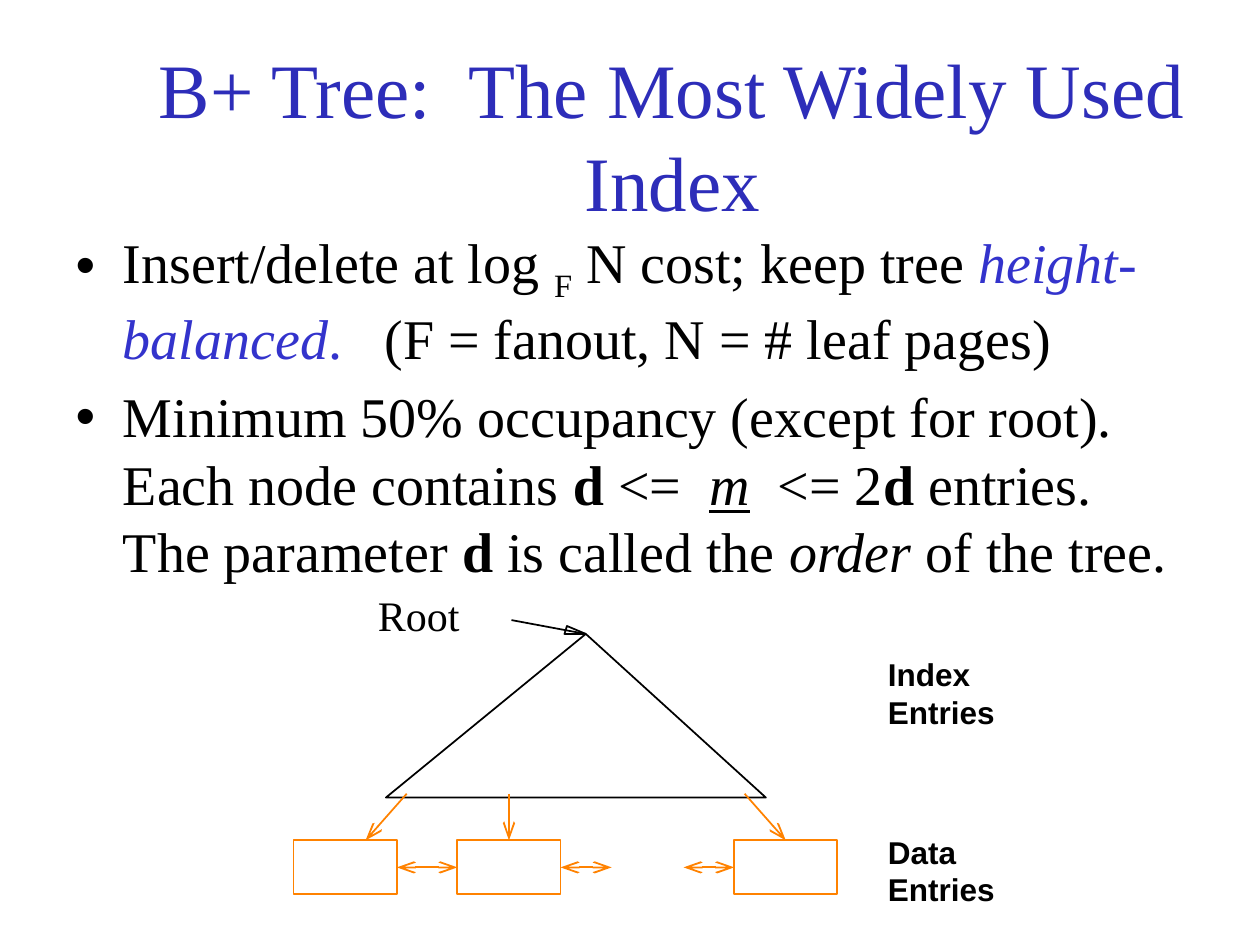
from typing import NamedTuple, Optional

from lxml.etree import SubElement
from pptx import Presentation
from pptx.dml.color import RGBColor
from pptx.enum.shapes import MSO_CONNECTOR as Link, MSO_SHAPE as Kind
from pptx.enum.text import MSO_ANCHOR as Anchor, MSO_AUTO_SIZE as Fit, PP_ALIGN as Align
from pptx.oxml.ns import qn
from pptx.util import Cm, Pt

BLACK = RGBColor(0x00, 0x00, 0x00)
NAVY = RGBColor(0x2D, 0x2D, 0xB9)
BLUE = RGBColor(0x33, 0x33, 0xCC)
ORANGE = RGBColor(0xFF, 0x82, 0x00)
SERIF, SANS = "Times New Roman", "Arial"

TOP, WIDE, HIGH = 16.94, 2.08, 1.09
MID = TOP + HIGH / 2
LEFTS = (5.92, 9.22, 14.8)
APEX = (11.81, 12.78)
BASE = 16.08
TOP_SIDE, LEFT_SIDE, RIGHT_SIDE = 0, 1, 3


class Run(NamedTuple):
    text: str
    style: dict = {}


class Arrow(NamedTuple):
    start: tuple
    end: tuple
    tail: Optional[tuple] = None  # (leaf index, side) joined at the start
    head: Optional[tuple] = None  # (leaf index, side) joined at the end
    both: bool = False


class Label(NamedTuple):
    text: str
    left: float
    top: float
    width: float
    height: float
    size: int
    face: str
    bold: bool
    wrap: bool


BOLD, ITALIC = {"bold": True}, {"italic": True}
BULLETS = (
    (
        Run("Insert/delete at log "),
        Run("F", {"sub": True}),
        Run(" N cost; keep tree "),
        Run("height-balanced", {"italic": True, "color": BLUE}),
        Run(".   ", {"color": BLUE}),
        Run("(F = fanout, N = # leaf pages)"),
    ),
    (
        Run("Minimum 50% occupancy (except for root).  Each node contains "),
        Run("d", BOLD),
        Run(" <=  "),
        Run("m", {"italic": True, "underline": True}),
        Run("  <= 2"),
        Run("d", BOLD),
        Run(" entries.  The parameter "),
        Run("d", BOLD),
        Run(" is called the "),
        Run("order", ITALIC),
        Run(" of the tree."),
    ),
)
ARROWS = (
    Arrow((8.2, 16.0), (7.37, TOP)),
    Arrow((10.26, 16.0), (10.26, TOP), head=(1, TOP_SIDE)),
    Arrow((15.01, 16.0), (15.84, TOP), head=(2, TOP_SIDE)),
    Arrow((8.0, MID), (9.22, MID), (0, RIGHT_SIDE), (1, LEFT_SIDE), True),
    Arrow((11.3, MID), (12.33, MID), tail=(1, RIGHT_SIDE), both=True),
    Arrow((13.78, MID), (14.8, MID), head=(2, LEFT_SIDE), both=True),
)
LABELS = (
    Label("Index Entries", 17.65, 13.08, 4.2, 1.7, 18, SANS, True, True),
    Label("Data Entries", 17.65, 16.66, 3.8, 1.7, 18, SANS, True, True),
    Label("Root", 7.37, 11.76, 2.16, 1.27, 24, SERIF, False, False),
)


def place(shape, *box: float) -> None:
    for name, value in zip(("left", "top", "width", "height"), box):
        setattr(shape, name, Cm(value))


def write(para, run: Run, size: int, face: str, color: RGBColor) -> None:
    part = para.add_run()
    part.text = run.text
    style = {"size": Pt(size), "name": face, **run.style}
    part.font.color.rgb = style.pop("color", color)
    if style.pop("sub", False):
        part.font._element.set("baseline", "-25000")
    for name, value in style.items():
        setattr(part.font, name, value)


def outline(shape, color: RGBColor) -> None:
    shape.shadow.inherit = False
    shape.fill.background()
    shape.line.color.rgb = color
    shape.line.width = Pt(1)


def draw_path(shapes, points: tuple) -> None:
    first, *rest = [(Cm(x), Cm(y)) for x, y in points]
    path = shapes.build_freeform(*first)
    path.add_line_segments(rest, close=True)
    outline(path.convert_to_shape(), BLACK)


def draw_line(shapes, start: tuple, end: tuple, color: RGBColor):
    line = shapes.add_connector(Link.STRAIGHT, *(Cm(v) for v in start + end))
    line.line.color.rgb = color
    line.line.width = Pt(1)
    SubElement(line._element.spPr, qn("a:effectLst"))
    return line


def draw_arrow(shapes, arrow: Arrow, leaves: list) -> None:
    line = draw_line(shapes, arrow.start, arrow.end, ORANGE)
    if arrow.tail:
        line.begin_connect(leaves[arrow.tail[0]], arrow.tail[1])
    if arrow.head:
        line.end_connect(leaves[arrow.head[0]], arrow.head[1])
    for tag in ("a:headEnd", "a:tailEnd") if arrow.both else ("a:tailEnd",):
        SubElement(line.line._get_or_add_ln(), qn(tag), type="arrow", w="med", len="lg")


def draw_leaf(shapes, left: float):
    leaf = shapes.add_shape(Kind.RECTANGLE, *(Cm(v) for v in (left, TOP, WIDE, HIGH)))
    outline(leaf, ORANGE)
    return leaf


def draw_label(shapes, label: Label) -> None:
    box = shapes.add_textbox(*(Cm(v) for v in label[1:5]))
    box.text_frame.word_wrap = label.wrap
    run = Run(label.text, {"bold": label.bold})
    write(box.text_frame.paragraphs[0], run, label.size, label.face, BLACK)


def fill_text(slide) -> None:
    title, body = slide.shapes.title, slide.placeholders[1]
    place(title, 1.9, 1.17, 23.3, 3.07)
    place(body, 1.27, 4.45, 23.06, 8.25)
    for shape in (title, body):
        shape.text_frame.auto_size = Fit.NONE
    title.text_frame.vertical_anchor = Anchor.MIDDLE
    head = title.text_frame.paragraphs[0]
    head.alignment = Align.CENTER
    write(head, Run("B+ Tree:  The Most Widely Used Index"), 44, SERIF, NAVY)
    for i, runs in enumerate(BULLETS):
        frame = body.text_frame
        para = frame.add_paragraph() if i else frame.paragraphs[0]
        para.space_before = Pt(6.4 if i else 0)
        for run in runs:
            write(para, run, 32, SERIF, BLACK)


def main() -> None:
    deck = Presentation()
    deck.slide_width, deck.slide_height = Cm(25.4), Cm(19.05)
    slide = deck.slides.add_slide(deck.slide_layouts[1])
    shapes = slide.shapes
    fill_text(slide)
    draw_path(shapes, ((7.78, BASE), APEX, (15.44, BASE)))
    draw_line(shapes, (10.31, 12.5), APEX, BLACK)
    draw_path(shapes, ((11.43, 12.62), APEX, (11.38, 12.78)))
    leaves = [draw_leaf(shapes, left) for left in LEFTS]
    for arrow in ARROWS:
        draw_arrow(shapes, arrow, leaves)
    for label in LABELS:
        draw_label(shapes, label)
    deck.save("out.pptx")


if __name__ == "__main__":
    main()
